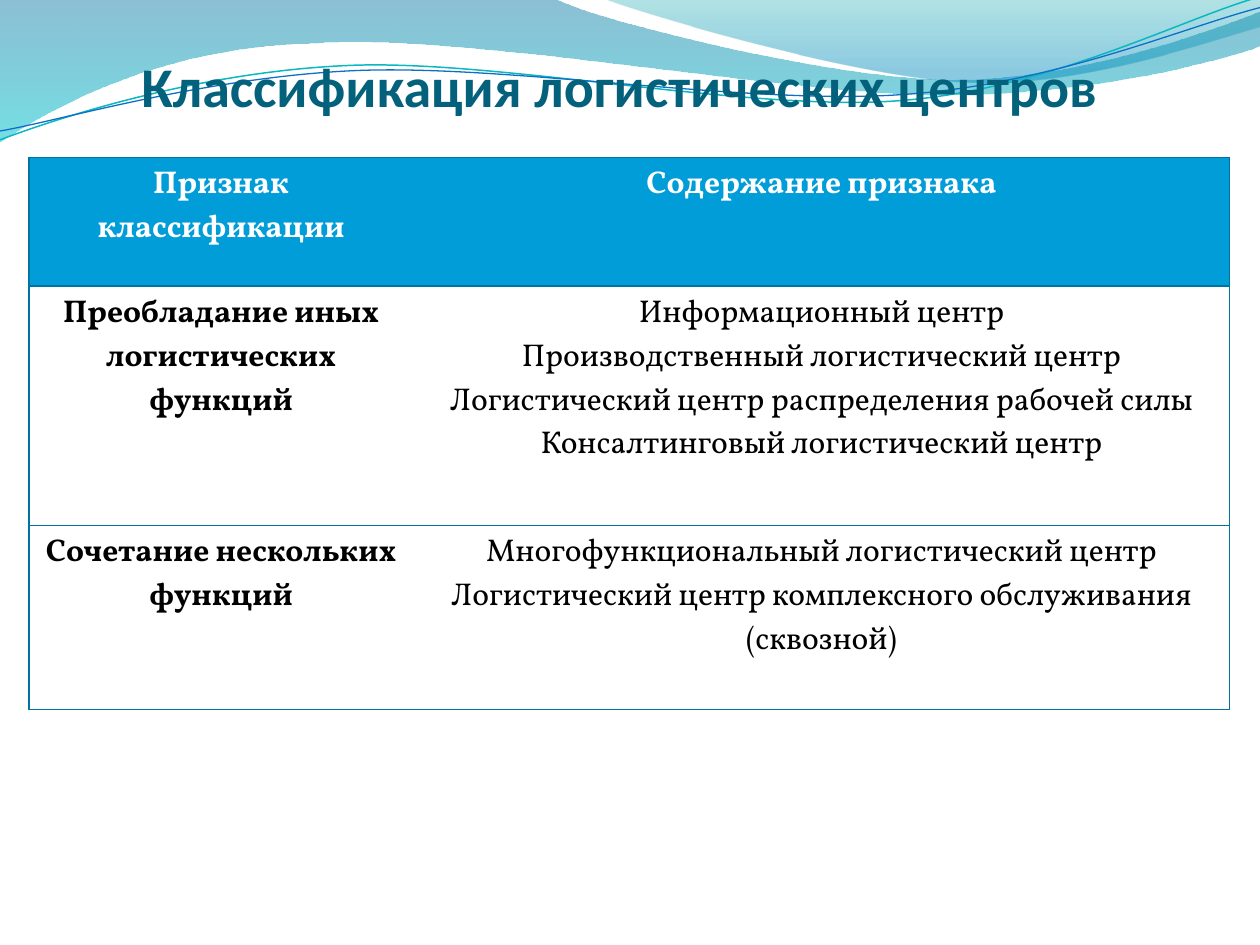
from math import cos, radians, sin

from lxml import etree
from pptx import Presentation
from pptx.dml.color import RGBColor
from pptx.enum.text import MSO_ANCHOR, PP_ALIGN
from pptx.oxml.ns import qn
from pptx.util import Inches, Pt

CENTER = PP_ALIGN.CENTER
BOTTOM = MSO_ANCHOR.BOTTOM
BLANK_LAYOUT = 6
PLAIN_TABLE_STYLE = "{2D5ABB26-0587-4C30-8999-92F81FD0307C}"
WAVE_TURN = -2.7

COLORS = {
    "title": "04617B", "header": "009DD9", "border": "0074A1",
    "white": "FFFFFF", "black": "000000",
    "deep": "0074A1", "aqua": "00C6CF", "teal": "00A1A9", "blue": "008BBF",
    "teal_line": "0AB8BF", "blue_line": "0F6FC6",
}

# Box, then steps: one point is a straight step, three are a Bezier step
BANDS = [
    ((-0.01, -0.01, 10.02, 1.14),
     [[(0, 0)], [(4.4, -0.01)],
      [(4.76, 0.17), (6.64, 0.63), (7.58, 0.63)],
      [(8.53, 0.63), (9.58, 0.26), (10, 0.09)],
      [(10.01, 0.36)],
      [(9.83, 0.44), (8.7, 0.76), (7.46, 0.75)],
      [(6.22, 0.75), (3.82, 0.28), (2.57, 0.34)],
      [(1.29, 0.36), (0.46, 0.83), (-0.01, 1.13)],
      [(0, 0)]],
     [(0, "deep", 45), (1, "aqua", 55)]),
    ((4.79, -0.01, 5.21, 0.7),
     [[(4.79, -0.01)],
      [(5.09, 0.11), (6.82, 0.62), (7.69, 0.65)],
      [(8.56, 0.69), (9.61, 0.32), (10, 0.21)],
      [(10, 0)], [(4.79, -0.01)]],
     [(0, "teal", 30), (0.8, "blue", 45)]),
]
WAVES = [
    ((-0.02, 0.22, 10.02, 0.71),
     [[(0, 1.11)],
      [(0.48, 0.93), (1.58, 0.57), (2.77, 0.52)],
      [(3.95, 0.47), (5.93, 0.89), (7.13, 0.8)],
      [(8.33, 0.71), (9.38, 0.15), (9.98, -0.02)]],
     "teal_line", 0.85),
    ((-0.02, 0.3, 10.03, 0.58),
     [[(0, 1.04)],
      [(0.47, 0.96), (1.64, 0.61), (2.83, 0.56)],
      [(4.03, 0.51), (5.97, 0.84), (7.17, 0.75)],
      [(8.36, 0.67), (9.41, 0.21), (10, 0.06)]],
     "blue_line", 0.75),
]

TITLE = "Классификация логистических центров"
COLUMN_WIDTHS = [3.05, 6.48]
ROW_HEIGHTS = [1.02, 1.9, 1.46]
ROWS = [
    (["Признак классификации"], ["Содержание признака"]),
    (["Преобладание иных логистических функций"],
     ["Информационный центр",
      "Производственный логистический центр",
      "Логистический центр распределения рабочей силы",
      "Консалтинговый логистический центр"]),
    (["Сочетание нескольких функций"],
     ["Многофункциональный логистический центр",
      "Логистический центр комплексного обслуживания (сквозной)"]),
]
ROW_BORDERS = ["T", "TB", "B"]


def rgb(name):
    return RGBColor.from_string(COLORS[name])


def add_outline(shapes, box, steps, close, turn=0):
    """Add a curved freeform; steps are given as seen on the turned shape."""
    left, top, width, height = box
    builder = shapes.build_freeform(Inches(left), Inches(top))
    builder.add_line_segments([(Inches(left + width), Inches(top + height))], close=close)
    shape = builder.convert_to_shape()
    shape.shadow.inherit = False
    shape.rotation = turn % 360
    cosine, sine = cos(radians(-turn)), sin(radians(-turn))
    outline = next(shape.element.iter(qn("a:path")))
    for node in list(outline):
        outline.remove(node)
    for index, step in enumerate(steps):
        kind = "moveTo" if index == 0 else "lnTo" if len(step) == 1 else "cubicBezTo"
        node = etree.SubElement(outline, qn(f"a:{kind}"))
        for x, y in step:
            across, down = x - left - width / 2, y - top - height / 2
            local_x = across * cosine - down * sine + width / 2
            local_y = across * sine + down * cosine + height / 2
            etree.SubElement(node, qn("a:pt"), x=str(Inches(local_x)), y=str(Inches(local_y)))
    if close:
        etree.SubElement(outline, qn("a:close"))
    return shape


def add_band(page, box, steps, stops):
    shape = add_outline(page.shapes, box, steps, True)
    shape.line.fill.background()
    shape.fill.gradient()
    shape.fill.gradient_angle = 270
    for stop, (position, color, _) in zip(shape.fill.gradient_stops, stops):
        stop.position = position
        stop.color.rgb = rgb(color)
    # Opacity of each gradient stop
    for node, (_, _, opacity) in zip(shape.element.iter(qn("a:srgbClr")), stops):
        etree.SubElement(node, qn("a:alpha"), val=str(opacity * 1000))


def add_wave(group, box, steps, color, width):
    shape = add_outline(group.shapes, box, steps, False, WAVE_TURN)
    shape.fill.background()
    shape.line.color.rgb = rgb(color)
    shape.line.width = Pt(width)


def write_lines(frame, lines, color, **font_format):
    for index, line in enumerate(lines):
        para = frame.paragraphs[0] if index == 0 else frame.add_paragraph()
        para.alignment = CENTER
        span = para.add_run()
        span.text = line
        span.font.color.rgb = rgb(color)
        for name, value in font_format.items():
            setattr(span.font, name, value)


def add_title(page):
    box = page.shapes.add_textbox(Inches(0), Inches(0.23), Inches(9.84), Inches(0.71))
    frame_format = {"word_wrap": True, "vertical_anchor": BOTTOM, "margin_left": 0,
                    "margin_right": 0, "margin_top": Inches(0.05), "margin_bottom": 0}
    for name, value in frame_format.items():
        setattr(box.text_frame, name, value)
    write_lines(box.text_frame, [TITLE], "title", name="Calibri", size=Pt(32), bold=True)


def set_borders(cell, sides):
    properties = cell._tc.get_or_add_tcPr()
    for side in sides:
        line = etree.SubElement(properties, qn(f"a:ln{side}"), w=str(Pt(0.75)))
        fill = etree.SubElement(line, qn("a:solidFill"))
        etree.SubElement(fill, qn("a:srgbClr"), val=COLORS["border"])


def add_classification(page):
    frame = page.shapes.add_table(
        len(ROWS), len(COLUMN_WIDTHS), Inches(0.23), Inches(1.25),
        Inches(sum(COLUMN_WIDTHS)), Inches(sum(ROW_HEIGHTS)))
    next(frame.element.iter(qn("a:tableStyleId"))).text = PLAIN_TABLE_STYLE
    table = frame.table
    for column, width in zip(table.columns, COLUMN_WIDTHS):
        column.width = Inches(width)
    for row, height in zip(table.rows, ROW_HEIGHTS):
        row.height = Inches(height)
    for row_index, texts in enumerate(ROWS):
        is_header = row_index == 0
        for column_index, lines in enumerate(texts):
            cell = table.cell(row_index, column_index)
            is_first = column_index == 0
            set_borders(cell, ("L" if is_first else "R") + ROW_BORDERS[row_index])
            if is_header:
                cell.fill.solid()
                cell.fill.fore_color.rgb = rgb("header")
            else:
                cell.fill.background()
            write_lines(cell.text_frame, lines, "white" if is_header else "black",
                        name="Vollkorn", size=Pt(18), bold=is_header or is_first)


def main():
    deck = Presentation()
    deck.slide_width, deck.slide_height = Inches(10), Inches(7.5)
    page = deck.slides.add_slide(deck.slide_layouts[BLANK_LAYOUT])
    # Waves along the top edge
    for box, steps, stops in BANDS:
        add_band(page, box, steps, stops)
    group = page.shapes.add_group_shape()
    for box, steps, color, width in WAVES:
        add_wave(group, box, steps, color, width)
    # Content
    add_title(page)
    add_classification(page)
    deck.save("out.pptx")


if __name__ == "__main__":
    main()
